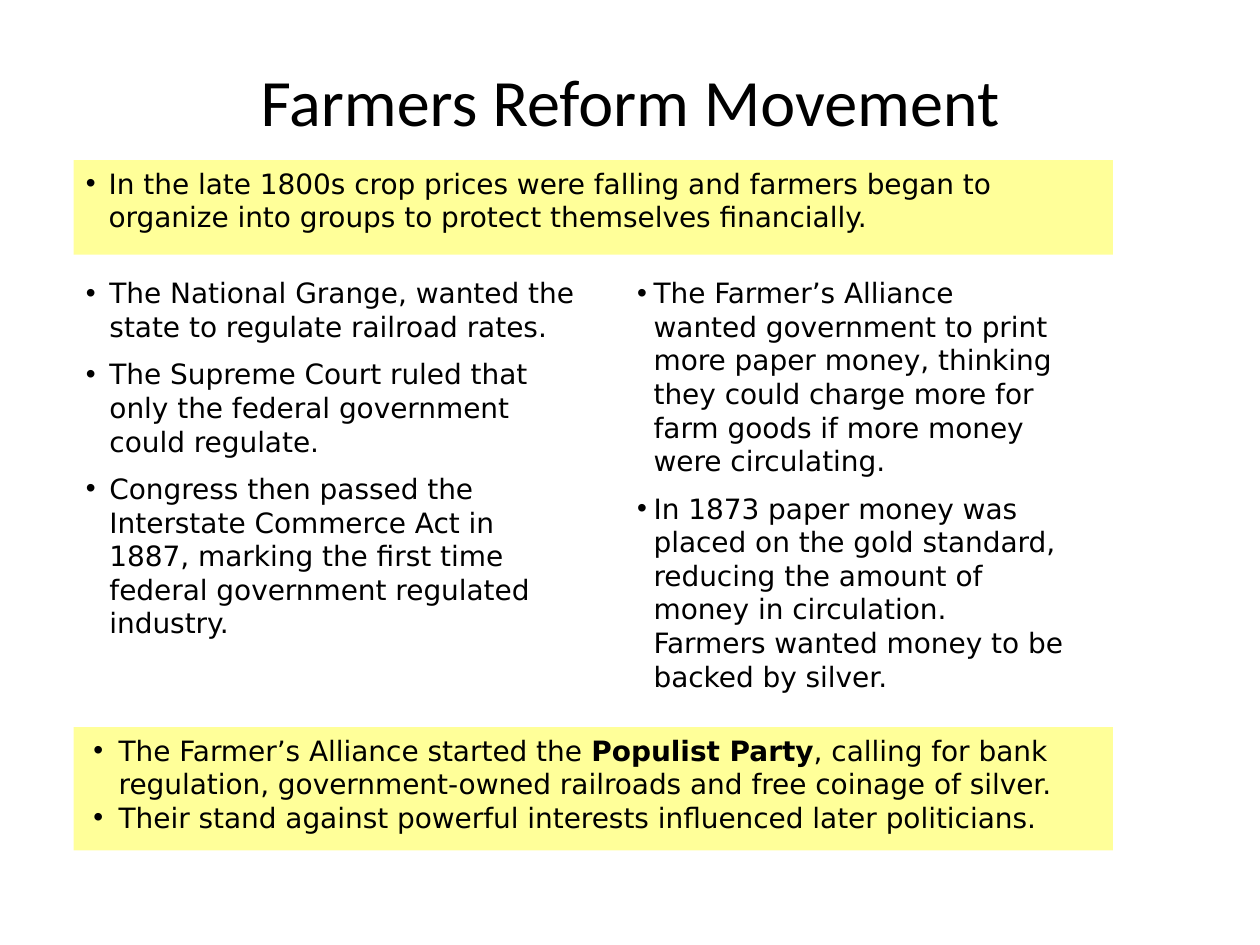
from dataclasses import dataclass
from lxml.etree import SubElement
from pptx import Presentation
from pptx.dml.color import RGBColor
from pptx.enum.shapes import MSO_SHAPE as Shape
from pptx.enum.text import MSO_ANCHOR as Anchor, PP_ALIGN as Align
from pptx.oxml.ns import qn
from pptx.util import Pt


@dataclass(frozen=True)
class Theme:
    ink: RGBColor = RGBColor(0, 0, 0)
    paper: RGBColor = RGBColor(255, 255, 255)
    banner: RGBColor = RGBColor(255, 255, 153)
    title_font: str = "Calibri"
    body_font: str = "DejaVu Sans"
    title_size: float = 37.8
    body_size: float = 16
    line_pitch: float = 19.2


THEME = Theme()
TITLE = "Farmers Reform Movement"
OPENING = [
    ["In the late 1800s crop prices were falling and farmers began to organize into "
     "groups to protect themselves financially."],
]
GRANGE = [
    ["The National Grange, wanted the state to regulate railroad rates."],
    ["The Supreme Court ruled that only the federal government could regulate."],
    ["Congress then passed the Interstate Commerce Act in 1887, marking the first time "
     "federal government regulated industry."],
]
ALLIANCE = [
    ["The Farmer’s Alliance wanted government to print more paper money, thinking they "
     "could charge more for farm goods if more money were circulating."],
    ["In 1873 paper money was placed on the gold standard, reducing the amount of money "
     "in circulation. Farmers wanted money to be backed by silver."],
]
POPULISTS = [
    ["The Farmer’s Alliance started the ", "Populist Party",
     ", calling for bank regulation, government-owned railroads and free coinage of silver."],
    ["Their stand against powerful interests influenced later politicians."],
]
BOLD_PHRASES = {"Populist Party"}

LEFT, FULL_WIDTH = 42, 594
COLUMN_TOP = 154
PANELS = [
    dict(box=(357, COLUMN_TOP, 259, 248), fill=THEME.paper, items=ALLIANCE,
         indent=(9.4, 9.4), gap=8),
    dict(box=(LEFT, 91.5, FULL_WIDTH, 54), fill=THEME.banner, items=OPENING,
         indent=(13, 13), gap=0),
    dict(box=(LEFT, COLUMN_TOP, 294, 254), fill=THEME.paper, items=GRANGE,
         indent=(13.5, 13.5), gap=8),
    dict(box=(LEFT, 415.5, FULL_WIDTH, 70.5), fill=THEME.banner, items=POPULISTS,
         indent=(18.7, 14.4), gap=0),
]


def apply(target, values):
    for name, value in values.items():
        setattr(target, name, value)


def style_font(font, name, size, bold=False):
    apply(font, dict(name=name, size=Pt(size), bold=bold))
    font.color.rgb = THEME.ink


def prepare_frame(shape):
    frame = shape.text_frame
    apply(frame, dict(word_wrap=True, vertical_anchor=Anchor.TOP,
                      margin_left=Pt(7.2), margin_right=Pt(7.2),
                      margin_top=Pt(3.6), margin_bottom=Pt(3.6)))
    return frame


def add_bullet(paragraph, margin, hanging):
    properties = paragraph._p.get_or_add_pPr()
    properties.set("marL", str(Pt(margin)))
    properties.set("indent", str(-Pt(hanging)))
    SubElement(properties, qn("a:buFont"), typeface="Arial")
    SubElement(properties, qn("a:buChar"), char="•")


def add_title(slide):
    shape = slide.shapes.add_textbox(Pt(LEFT), Pt(31), Pt(636), Pt(44))
    paragraph = prepare_frame(shape).paragraphs[0]
    paragraph.text = TITLE
    paragraph.alignment = Align.CENTER
    style_font(paragraph.runs[0].font, THEME.title_font, THEME.title_size)


def add_panel(slide, box, fill, items, indent, gap):
    shape = slide.shapes.add_shape(Shape.RECTANGLE, *map(Pt, box))
    shape.shadow.inherit = False
    shape.fill.solid()
    shape.fill.fore_color.rgb = fill
    shape.line.fill.background()
    frame = prepare_frame(shape)
    for index, phrases in enumerate(items):
        paragraph = frame.add_paragraph() if index else frame.paragraphs[0]
        add_bullet(paragraph, *indent)
        apply(paragraph, dict(alignment=Align.LEFT, line_spacing=Pt(THEME.line_pitch),
                              space_before=Pt(gap if index else 0)))
        for phrase in phrases:
            run = paragraph.add_run()
            run.text = phrase
            style_font(run.font, THEME.body_font, THEME.body_size, phrase in BOLD_PHRASES)


def main():
    presentation = Presentation()
    apply(presentation, dict(slide_width=Pt(720), slide_height=Pt(540)))
    slide = presentation.slides.add_slide(presentation.slide_layouts[6])
    add_title(slide)
    for panel in PANELS:
        add_panel(slide, **panel)
    presentation.save("out.pptx")


if __name__ == "__main__":
    main()
